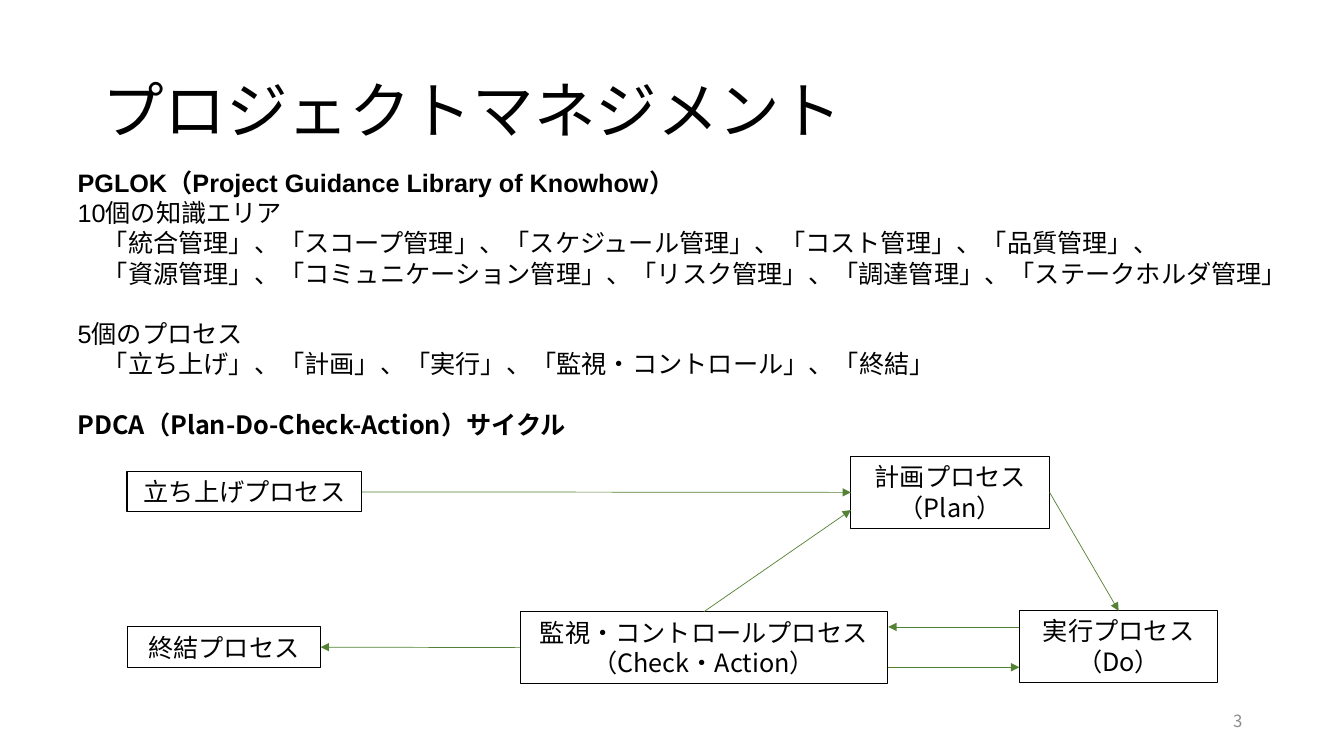
"""Build the project management slide with its PDCA process diagram."""
from dataclasses import dataclass
from typing import Optional

from pptx import Presentation
from pptx.dml.color import RGBColor
from pptx.enum.shapes import MSO_CONNECTOR, MSO_SHAPE
from pptx.enum.text import MSO_ANCHOR, MSO_AUTO_SIZE, PP_ALIGN
from pptx.oxml.ns import qn
from pptx.util import Inches, Pt
from lxml.etree import SubElement


@dataclass(frozen=True)
class Theme:
    ink: RGBColor = RGBColor(0, 0, 0)
    muted: RGBColor = RGBColor(0x8C, 0x8C, 0x8C)
    arrow: RGBColor = RGBColor(0x54, 0x82, 0x35)
    latin: str = "Arial"
    cjk: str = "Noto Sans CJK JP"
    title: int = 44
    body: int = 18
    number: int = 12
    leading: float = 21.6


@dataclass(frozen=True)
class Line:
    text: str
    font: str
    bold: bool = False
    indent: float = 0
    before: float = 0


@dataclass(frozen=True)
class Box:
    key: str
    lines: tuple
    left: float
    top: float
    width: float
    height: float


@dataclass(frozen=True)
class Arrow:
    start: tuple
    end: tuple
    begin_at: Optional[tuple] = None
    end_at: Optional[tuple] = None


T = Theme()
TOP, LEFT, RIGHT = 0, 1, 3

BODY = (
    Line("PGLOK（Project Guidance Library of Knowhow）", T.latin, bold=True),
    Line("10個の知識エリア", T.latin),
    Line("「統合管理」、「スコープ管理」、「スケジュール管理」、「コスト管理」、「品質管理」、",
         T.cjk, indent=0.25),
    Line("「資源管理」、「コミュニケーション管理」、「リスク管理」、「調達管理」、「ステークホルダ管理」",
         T.cjk, indent=0.25),
    Line("5個のプロセス", T.latin, before=T.leading),
    Line("「立ち上げ」、「計画」、「実行」、「監視・コントロール」、「終結」", T.cjk, indent=0.25),
    Line("PDCA（Plan-Do-Check-Action）サイクル", T.cjk, bold=True, before=T.leading),
)

BOXES = (
    Box("start", ("立ち上げプロセス",), 1.26, 4.68, 2.33, 0.4),
    Box("plan", ("計画プロセス", "（Plan）"), 8.44, 4.53, 1.97, 0.71),
    Box("check", ("監視・コントロールプロセス", "（Check・Action）"), 5.16, 6.07, 3.64, 0.71),
    Box("do", ("実行プロセス", "（Do）"), 10.11, 6.06, 1.97, 0.71),
    Box("close", ("終結プロセス",), 1.26, 6.22, 1.92, 0.4),
)

ARROWS = (
    Arrow((3.59, 4.88), (8.44, 4.88), ("start", RIGHT), ("plan", LEFT)),
    Arrow((10.41, 4.88), (11.1, 6.06), ("plan", RIGHT), ("do", TOP)),
    Arrow((10.11, 6.22), (8.81, 6.22)),
    Arrow((8.81, 6.62), (10.11, 6.62)),
    Arrow((6.98, 6.07), (8.44, 5.06), ("check", TOP)),
    Arrow((5.16, 6.42), (3.18, 6.42), ("check", LEFT), ("close", RIGHT)),
)


def place(sp, left: float, top: float, width: float, height: float) -> None:
    sp.left, sp.top = Inches(left), Inches(top)
    sp.width, sp.height = Inches(width), Inches(height)


def add_run(p, text: str, size: int, font: str = T.cjk,
            color: RGBColor = T.ink, bold: bool = False) -> None:
    r = p.add_run()
    r.text = text
    r.font.size, r.font.name, r.font.bold = Pt(size), font, bold
    r.font.color.rgb = color
    SubElement(r.font._element, qn("a:ea")).set("typeface", T.cjk)


def next_paragraph(tf, index: int):
    p = tf.add_paragraph() if index else tf.paragraphs[0]
    p.line_spacing = Pt(T.leading)
    return p


def add_title(slide, text: str) -> None:
    sp = slide.shapes.title
    place(sp, 0.92, 0.4, 11.5, 1.45)
    tf = sp.text_frame
    tf.auto_size, tf.vertical_anchor = MSO_AUTO_SIZE.NONE, MSO_ANCHOR.MIDDLE
    p = tf.paragraphs[0]
    p.alignment, p.line_spacing = PP_ALIGN.LEFT, 0.9
    add_run(p, text, T.title)


def add_body(slide, lines: tuple) -> None:
    sp = slide.placeholders[1]
    place(sp, 0.67, 1.61, 12.4, 3.43)
    tf = sp.text_frame
    tf.auto_size, tf.vertical_anchor = MSO_AUTO_SIZE.NONE, MSO_ANCHOR.TOP
    for i, line in enumerate(lines):
        p = next_paragraph(tf, i)
        p.space_before = Pt(line.before)
        pPr = p._p.get_or_add_pPr()
        pPr.set("marL", str(Inches(line.indent)))
        pPr.set("indent", "0")
        SubElement(pPr, qn("a:buNone"))
        add_run(p, line.text, T.body, line.font, bold=line.bold)


def add_number(slide, text: str) -> None:
    sp = slide.shapes.add_textbox(Inches(9.42), Inches(6.95), Inches(3), Inches(0.4))
    tf = sp.text_frame
    tf.word_wrap, tf.vertical_anchor = True, MSO_ANCHOR.MIDDLE
    p = tf.paragraphs[0]
    p.alignment = PP_ALIGN.RIGHT
    add_run(p, text, T.number, color=T.muted)


def add_box(slide, box: Box):
    sp = slide.shapes.add_shape(MSO_SHAPE.RECTANGLE, Inches(box.left), Inches(box.top),
                                Inches(box.width), Inches(box.height))
    sp.shadow.inherit = False
    sp.fill.background()
    sp.line.color.rgb, sp.line.width = T.ink, Pt(0.75)
    tf = sp.text_frame
    tf.word_wrap, tf.vertical_anchor = False, MSO_ANCHOR.TOP
    for i, text in enumerate(box.lines):
        p = next_paragraph(tf, i)
        p.alignment = PP_ALIGN.CENTER
        add_run(p, text, T.body)
    return sp


def add_arrow(slide, arrow: Arrow, boxes: dict) -> None:
    cx = slide.shapes.add_connector(MSO_CONNECTOR.STRAIGHT,
                                    *map(Inches, arrow.start + arrow.end))
    if arrow.begin_at:
        key, side = arrow.begin_at
        cx.begin_connect(boxes[key], side)
    if arrow.end_at:
        key, side = arrow.end_at
        cx.end_connect(boxes[key], side)
    cx.line.color.rgb, cx.line.width = T.arrow, Pt(0.5)
    spPr = cx._element.spPr
    SubElement(spPr.find(qn("a:ln")), qn("a:tailEnd")).set("type", "triangle")
    SubElement(spPr, qn("a:effectLst"))


def main() -> None:
    prs = Presentation()
    prs.slide_width, prs.slide_height = Inches(13.33), Inches(7.5)
    slide = prs.slides.add_slide(prs.slide_layouts[1])
    add_title(slide, "プロジェクトマネジメント")
    add_number(slide, "3")
    add_body(slide, BODY)
    boxes = {box.key: add_box(slide, box) for box in BOXES}
    for arrow in ARROWS:
        add_arrow(slide, arrow, boxes)
    prs.save("out.pptx")


if __name__ == "__main__":
    main()
